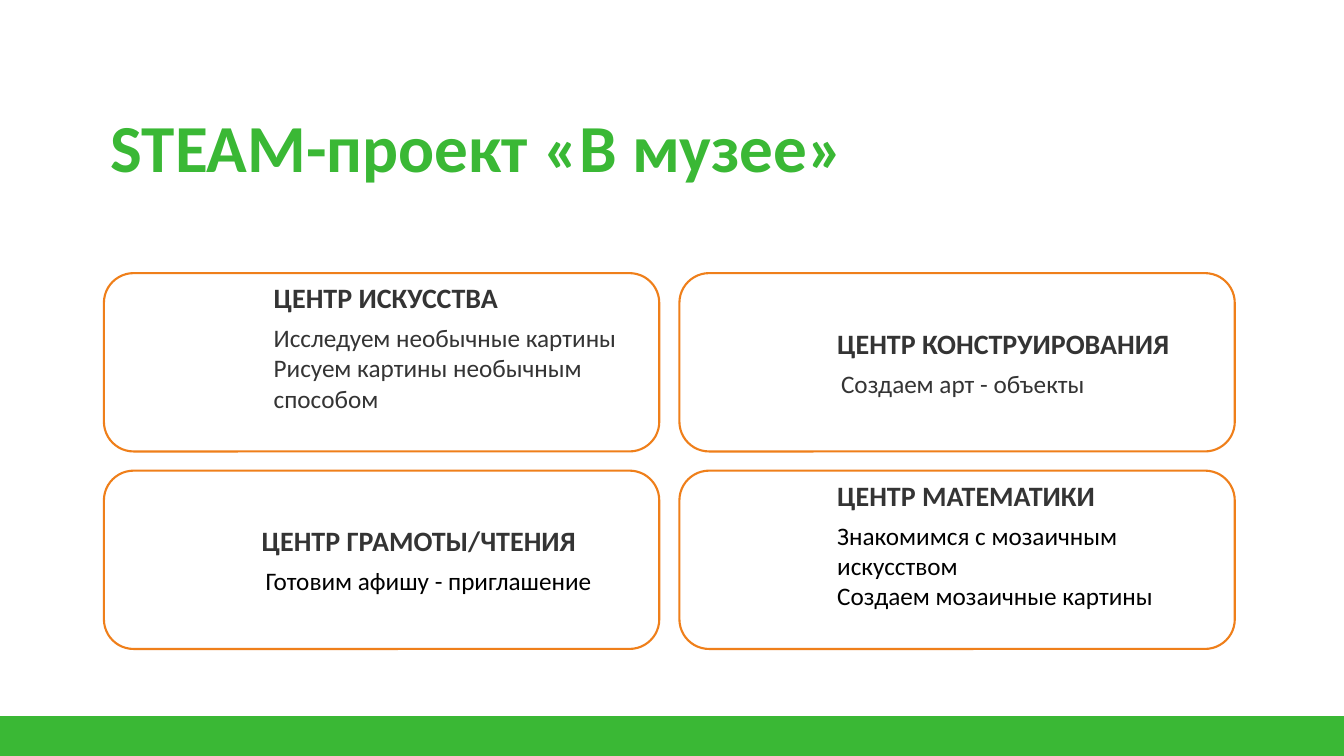
from dataclasses import dataclass

from pptx import Presentation
from pptx.dml.color import RGBColor
from pptx.enum.shapes import MSO_SHAPE as SHAPE
from pptx.enum.text import MSO_ANCHOR as ANCHOR, PP_ALIGN as ALIGN
from pptx.util import Pt

GREEN = RGBColor(0x3A, 0xB8, 0x35)
ORANGE = RGBColor(0xEF, 0x7F, 0x1A)
GREY = RGBColor(0x34, 0x34, 0x34)
BLACK = RGBColor(0, 0, 0)

TITLE = {"name": "Calibri", "size": Pt(48), "bold": True}
HEADING = {"name": "Calibri", "size": Pt(20), "bold": True}
BODY = {"name": "Calibri", "size": Pt(18), "bold": False}

CARD_W, CARD_H = 396.7, 127.4
CARD_LEFT, CARD_TOP = 74.2, 195.1
STEP_X, STEP_Y = 411.1, 141.1


@dataclass
class Center:
    heading: str
    lines: list[str]
    heading_indent: float
    body_indent: float
    body_color: RGBColor
    align: ALIGN = ALIGN.LEFT
    bottom_space: float = 0


CENTERS = [
    Center("ЦЕНТР ИСКУССТВА",
           ["Исследуем необычные картины", "Рисуем картины необычным способом"],
           108, 108, GREY, bottom_space=22),
    Center("ЦЕНТР КОНСТРУИРОВАНИЯ", ["Создаем арт - объекты"], 99.4, 102.2, GREY),
    Center("ЦЕНТР ГРАМОТЫ/ЧТЕНИЯ", ["Готовим афишу - приглашение"],
           99.4, 102.2, BLACK, ALIGN.JUSTIFY),
    Center("ЦЕНТР МАТЕМАТИКИ",
           ["Знакомимся с мозаичным искусством", "Создаем мозаичные картины"],
           99.4, 99.4, BLACK, bottom_space=22),
]


def write(p, text: str, style: dict, color: RGBColor, indent: float = 0) -> None:
    pPr = p._p.get_or_add_pPr()
    pPr.set("marL", str(Pt(indent)))
    pPr.set("indent", "0")
    r = p.add_run()
    r.text = text
    for name, value in style.items():
        setattr(r.font, name, value)
    r.font.color.rgb = color


def add_footer_bar(s) -> None:
    sp = s.shapes.add_shape(SHAPE.RECTANGLE, Pt(0), Pt(511.9), Pt(960), Pt(28.1))
    sp.shadow.inherit = False
    sp.fill.solid()
    sp.fill.fore_color.rgb = GREEN
    sp.line.color.rgb = GREEN
    sp.line.width = Pt(1)


def add_title(s, text: str) -> None:
    tf = s.shapes.add_textbox(Pt(72), Pt(42.5), Pt(771), Pt(145.4)).text_frame
    tf.word_wrap = True
    tf.vertical_anchor = ANCHOR.MIDDLE
    tf.margin_bottom = Pt(25.4)
    write(tf.paragraphs[0], text, TITLE, GREEN)


def add_card(s, center: Center, left: float, top: float) -> None:
    sp = s.shapes.add_shape(SHAPE.ROUNDED_RECTANGLE,
                            Pt(left), Pt(top), Pt(CARD_W), Pt(CARD_H))
    sp.shadow.inherit = False
    sp.fill.background()
    sp.line.color.rgb = ORANGE
    sp.line.width = Pt(1.5)
    tf = sp.text_frame
    tf.word_wrap = True
    tf.vertical_anchor = ANCHOR.MIDDLE
    tf.margin_top = Pt(0)
    tf.margin_bottom = Pt(center.bottom_space)
    p = tf.paragraphs[0]
    p.alignment = ALIGN.LEFT
    p.space_after = Pt(6)
    write(p, center.heading, HEADING, GREY, center.heading_indent)
    for line in center.lines:
        p = tf.add_paragraph()
        p.alignment = center.align
        write(p, line, BODY, center.body_color, center.body_indent)


def main() -> None:
    prs = Presentation()
    prs.slide_width, prs.slide_height = Pt(960), Pt(540)
    s = prs.slides.add_slide(prs.slide_layouts[6])
    add_footer_bar(s)
    add_title(s, "STEAM-проект «В музее»")
    for i, center in enumerate(CENTERS):
        row, col = divmod(i, 2)
        add_card(s, center, CARD_LEFT + col * STEP_X, CARD_TOP + row * STEP_Y)
    prs.save("out.pptx")


if __name__ == "__main__":
    main()
